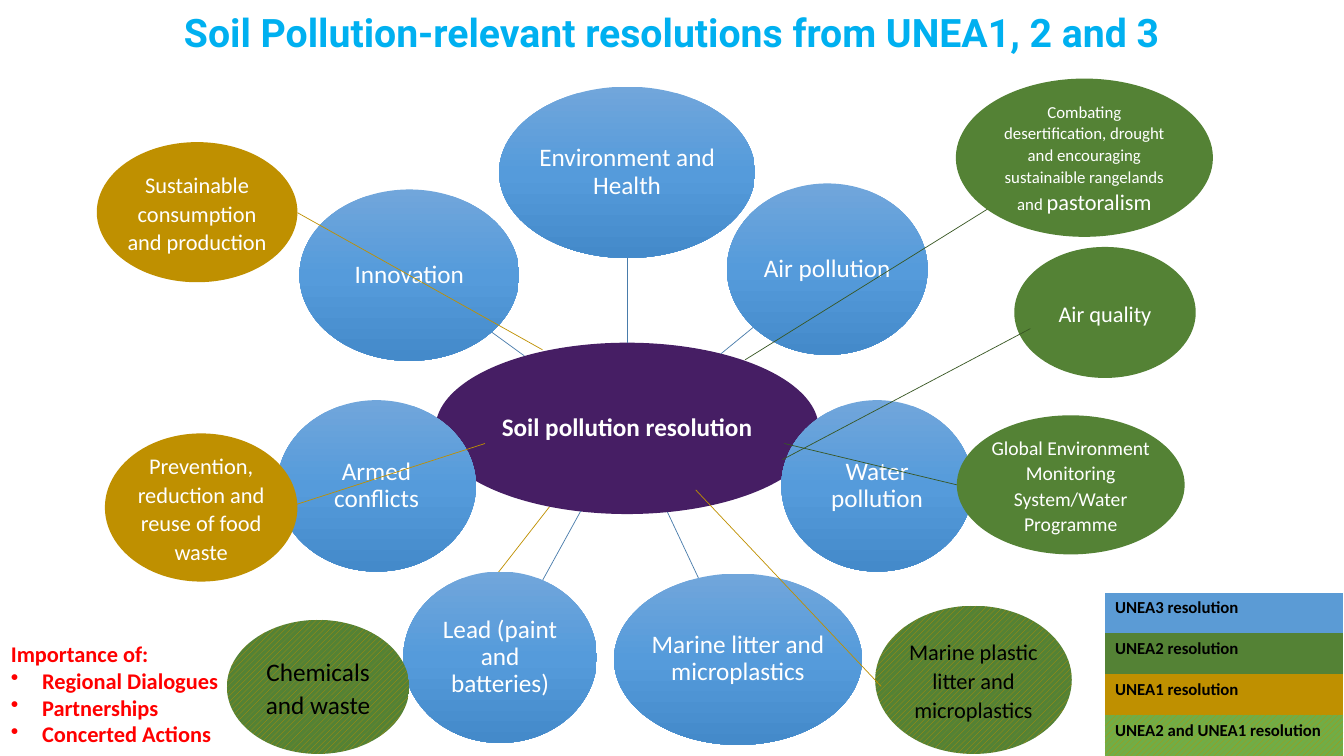
from copy import deepcopy
from pptx import Presentation
from pptx.dml.color import RGBColor as Rgb
from pptx.enum.dml import MSO_PATTERN as Pat
from pptx.enum.shapes import MSO_CONNECTOR as Link, MSO_SHAPE as Form
from pptx.enum.text import MSO_ANCHOR as Anchor, PP_ALIGN as Align
from pptx.oxml.ns import qn
from pptx.oxml.xmlchemy import OxmlElement as Node
from pptx.util import Inches, Pt

TITLE = "Soil Pollution-relevant resolutions from UNEA1, 2 and 3"
NOTES = ["Importance of:", "Regional Dialogues", "Partnerships", "Concerted Actions"]
HUB = ("Soil pollution resolution", (4.32, 3.4, 3.8, 1.7))
TOPICS = [
    ("Environment and Health", (4.95, 0.86, 2.54), (6.22, 3.4, 6.22, 2.55)),
    ("Air pollution", (7.21, 1.82, 1.99), (7.15, 3.51, 7.48, 3.24)),
    ("Water pollution", (7.75, 3.97, 1.9), (7.91, 4.64, 7.78, 4.6)),
    ("Marine litter and microplastics", (6.09, 5.69, 2.46), (6.62, 5.08, 6.93, 5.74)),
    ("Lead (paint and batteries)", (4, 5.67, 1.92), (5.76, 5.07, 5.38, 5.76)),
    ("Armed conflicts", (2.75, 3.97, 1.97), (4.53, 4.64, 4.69, 4.6)),
    ("Innovation", (2.97, 1.88, 2.18), (5.2, 3.53, 4.87, 3.29)),
]
TALL = 1.7
OUTER = [
    ("Sustainable consumption and production", (0.96, 1.41, 1.99, 1.39), "gold", 16, 0),
    ("Prevention, reduction and reuse of food waste", (1.04, 4.3, 1.91, 1.47), "gold", 16, 0),
    ("Chemicals and waste", (2.25, 6.15, 1.81, 1.33), "both", 18, 0),
    ("Marine plastic litter and microplastics", (8.68, 6.01, 1.95, 1.47), "both", 16, 0),
    ("Global Environment Monitoring System/Water Programme",
     (9.49, 4.12, 2.26, 1.38), "green", 14, 0),
    ("Air quality", (10.06, 2.45, 1.8, 1.3), "green", 16, 0.1),
]
DESERT = ("Combating desertification, drought and encouraging sustainaible rangelands and ",
          "pastoralism", (9.48, 0.78, 2.55, 1.57))
BACK = (5.62, 4.81, 4.06, 6.81)
LINKS = [
    ("pine", (7.78, 4.4, 9.49, 4.81)),
    ("pine", (7.39, 3.57, 10.22, 1.81)),
    ("gold", (6.9, 4.86, 8.74, 6.81)),
    ("gold", (4.81, 4.4, 2.83, 5.04)),
    ("gold", (2.95, 2.11, 5.38, 3.47)),
]
LAST = (7.76, 4.56, 10.22, 3.26)
KEY = [("UNEA3 resolution", "blue"), ("UNEA2 resolution", "green"),
       ("UNEA1 resolution", "gold"), ("UNEA2 and UNEA1 resolution", "mixed")]
THEME = {
    "font": "Calibri", "head": "Roboto",
    "big": 28, "main": 18, "note": 16, "small": 12, "line": 0.5,
    "white": "FFFFFF", "black": "000000", "red": "FF0000", "sky": "00B0F0",
    "hub": "461E64", "spoke": "497CAB", "gold": "BF9000", "green": "548235",
    "pine": "385723", "blue": "5B9BD5", "lime": "70AD47",
    "fade": ["71A6DB", "559BDB", "448ACA"],
}
STRIPES = {"both": "green", "mixed": "lime"}


def tint(name):
    return Rgb.from_string(THEME[name])


def paint(fill, name):
    if name in STRIPES:
        fill.patterned()
        fill.pattern = Pat.WIDE_UPWARD_DIAGONAL
        fill.fore_color.rgb = tint("gold")
        fill.back_color.rgb = tint(STRIPES[name])
    else:
        fill.solid()
        fill.fore_color.rgb = tint(name)


def fade(shape):
    fill = shape.fill
    fill.gradient()
    fill.gradient_angle = 270
    stops = shape._element.spPr.find(".//" + qn("a:gsLst"))
    stops.insert(1, deepcopy(stops[0]))
    for i, (stop, code) in enumerate(zip(fill.gradient_stops, THEME["fade"])):
        stop.position = i / 2
        stop.color.rgb = Rgb.from_string(code)


def write(para, text, size="main", color="white", bold=False, font="font",
          align=Align.CENTER, lead=None, after=None):
    para.alignment = align
    para.line_spacing = lead
    if after is not None:
        para.space_after = Pt(after)
    run = para.add_run()
    run.text = text
    run.font.name = THEME[font]
    run.font.size = Pt(THEME.get(size, size))
    run.font.bold = bold
    run.font.color.rgb = tint(color)


def oval(slide, box, name, pad):
    shape = slide.shapes.add_shape(Form.OVAL, *map(Inches, box))
    shape.shadow.inherit = False
    shape.line.fill.background()
    if name == "fade":
        fade(shape)
    else:
        paint(shape.fill, name)
    frame = shape.text_frame
    frame.word_wrap = True
    frame.vertical_anchor = Anchor.MIDDLE
    frame.margin_left = frame.margin_right = Inches(pad)
    frame.margin_top = frame.margin_bottom = Inches(pad / 2)
    return frame.paragraphs[0]


def link(slide, ends, name):
    line = slide.shapes.add_connector(Link.STRAIGHT, *map(Inches, ends))
    line.line.color.rgb = tint(name)
    line.line.width = Pt(THEME["line"])
    line._element.spPr.append(Node("a:effectLst"))


def area(slide, box):
    frame = slide.shapes.add_textbox(*map(Inches, box)).text_frame
    frame.word_wrap = True
    return frame


def bullet(para):
    props = para._p.get_or_add_pPr()
    props.set("marL", str(Inches(0.31)))
    props.set("indent", str(-Inches(0.31)))
    mark = Node("a:buChar")
    mark.set("char", "•")
    props.append(mark)


def legend(slide):
    table = slide.shapes.add_table(len(KEY), 1, *map(Inches, (10.96, 5.88, 2.36, 1.62))).table
    table.first_row = table.horz_banding = False
    style = table._tbl.tblPr.find(qn("a:tableStyleId"))
    style.text = "{2D5ABB26-0587-4C30-8999-92F81FD0307C}"
    for i, (text, name) in enumerate(KEY):
        cell = table.cell(i, 0)
        paint(cell.fill, name)
        write(cell.text_frame.paragraphs[0], text, size="small", color="black",
              bold=True, align=Align.LEFT)


def main():
    deck = Presentation()
    deck.slide_width, deck.slide_height = Inches(13.33), Inches(7.5)
    slide = deck.slides.add_slide(deck.slide_layouts[6])

    link(slide, BACK, "gold")
    write(oval(slide, HUB[1], "hub", 0.01), HUB[0], bold=True, lead=0.9)
    for text, spot, ends in TOPICS:
        link(slide, ends, "spoke")
        write(oval(slide, (*spot, TALL), "fade", 0.01), text, lead=0.9)
    for text, box, name, size, pad in OUTER:
        write(oval(slide, box, name, pad), text, size=size, lead=1.07, after=8,
              color="black" if name in STRIPES else "white")
    legend(slide)
    for name, ends in LINKS:
        link(slide, ends, name)

    write(area(slide, (0, 0.09, 13.32, 0.66)).paragraphs[0], TITLE, size="big",
          color="sky", bold=True, font="head", lead=0.9)
    frame = area(slide, (0.01, 6.3, 2.56, 1.18))
    for i, text in enumerate(NOTES):
        para = frame.add_paragraph() if i else frame.paragraphs[0]
        write(para, text, size="note", color="red", bold=True, align=Align.LEFT)
        if i:
            bullet(para)

    para = oval(slide, DESERT[2], "green", 0.1)
    for text, size in zip(DESERT, ("small", "note")):
        write(para, text, size=size, lead=1.07, after=8)
    link(slide, LAST, "pine")
    deck.save("out.pptx")


if __name__ == "__main__":
    main()
